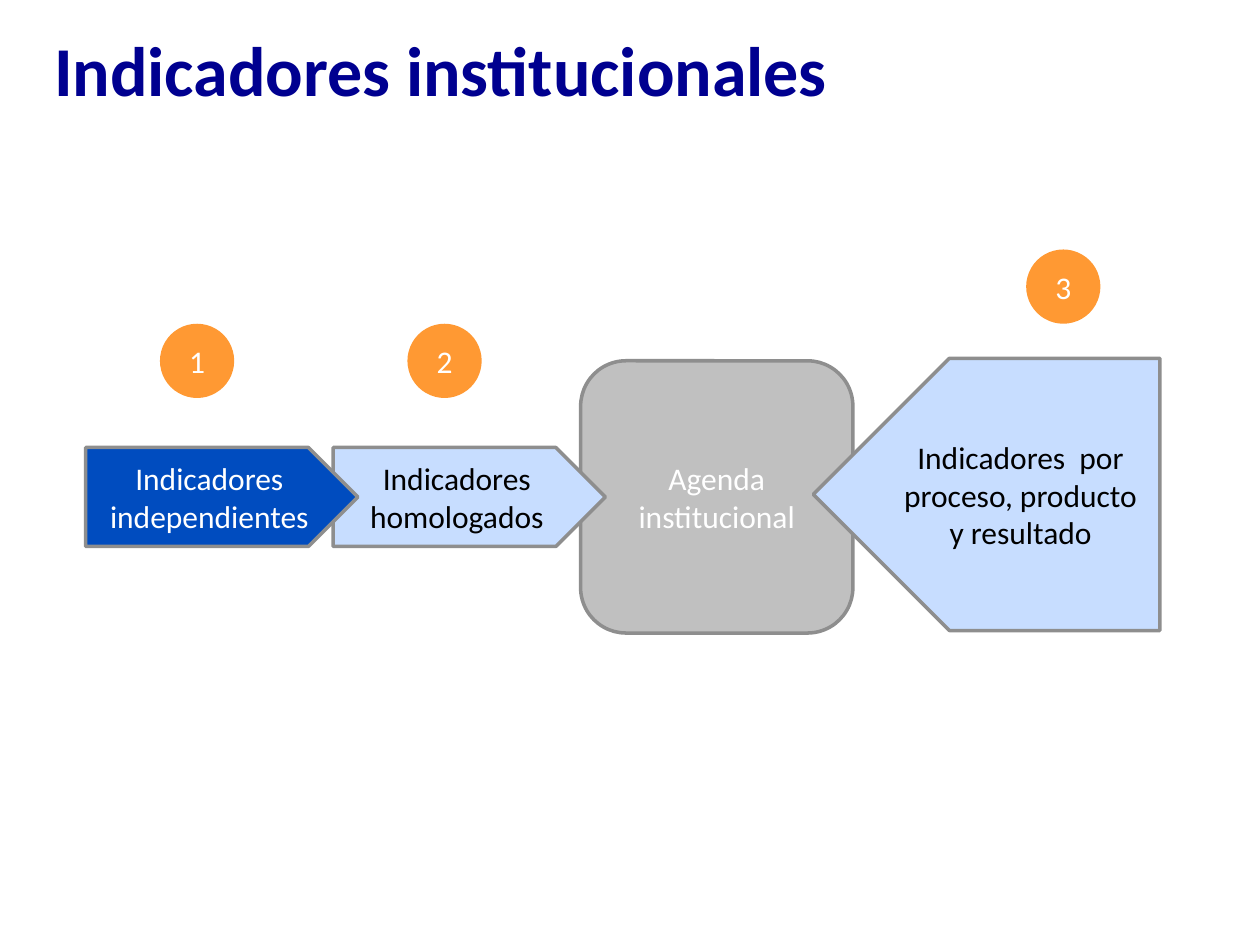
from pptx import Presentation
from pptx.dml.color import RGBColor
from pptx.enum.shapes import MSO_SHAPE
from pptx.enum.text import MSO_ANCHOR, MSO_AUTO_SIZE, PP_ALIGN
from pptx.util import Inches, Pt

ROUNDED, PLATE, OVAL = MSO_SHAPE.ROUNDED_RECTANGLE, MSO_SHAPE.PENTAGON, MSO_SHAPE.OVAL
MIDDLE = MSO_ANCHOR.MIDDLE
LEFT, CENTER = PP_ALIGN.LEFT, PP_ALIGN.CENTER

THEME = {
    "font": "Calibri", "title_size": 40, "body_size": 18, "line_width": 2,
    "navy": "000090", "blue": "004CBF", "pale": "C7DDFF", "gray": "C0C0C0",
    "edge": "8E8E8E", "orange": "FF9933", "white": "FFFFFF", "black": "000000",
}
X0, Y0, UNIT = 0.68, 1.98, 2.75 / 14


def color(name):
    return RGBColor.from_string(THEME[name])


def write(s, text, size, ink, align, bold=False):
    tf = s.text_frame
    tf.word_wrap = True
    tf.auto_size = MSO_AUTO_SIZE.NONE
    tf.vertical_anchor = MIDDLE
    p = tf.paragraphs[0]
    p.alignment = align
    r = p.add_run()
    r.text = text
    r.font.name = THEME["font"]
    r.font.size = Pt(THEME[size])
    r.font.bold = bold
    r.font.color.rgb = color(ink)
    return p


prs = Presentation()
prs.slide_width, prs.slide_height = Inches(10), Inches(7.5)
slide = prs.slides.add_slide(prs.slide_layouts[5])

title = slide.shapes.title
title.left, title.top = Inches(0.33), Inches(0.17)
title.width, title.height = Inches(8.33), Inches(0.92)
p = write(title, "Indicadores institucionales", "title_size", "navy", LEFT, True)
p.line_spacing = Pt(36)

# kind, column, row, columns wide, rows high, fill, ink, text
items = [
    (ROUNDED, 20, 4.5, 11, 11, "gray", "white", "Agenda institucional"),
    (PLATE, 10, 8, 11, 4, "pale", "black", "Indicadores homologados"),
    (PLATE, 0, 8, 11, 4, "blue", "white", "Indicadores independientes"),
    (PLATE, 29.4, 4.4, 14, 11, "pale", "black",
     "Indicadores  por proceso, producto y resultado"),
    (OVAL, 3, 3, 3, 3, "orange", "white", "1"),
    (OVAL, 13, 3, 3, 3, "orange", "white", "2"),
    (OVAL, 38, 0, 3, 3, "orange", "white", "3"),
]
for kind, col, row, cols, rows, fill, ink, text in items:
    s = slide.shapes.add_shape(
        kind, Inches(X0 + col * UNIT), Inches(Y0 + row * UNIT),
        Inches(cols * UNIT), Inches(rows * UNIT))
    s.shadow.inherit = False
    s.fill.solid()
    s.fill.fore_color.rgb = color(fill)
    if kind == OVAL:
        s.line.fill.background()
    else:
        s.line.color.rgb = color("edge")
        s.line.width = Pt(THEME["line_width"])
    if kind == PLATE and col > 20:
        s.element.spPr.xfrm.set("flipH", "1")
    write(s, text, "body_size", ink, CENTER)

prs.save("out.pptx")
